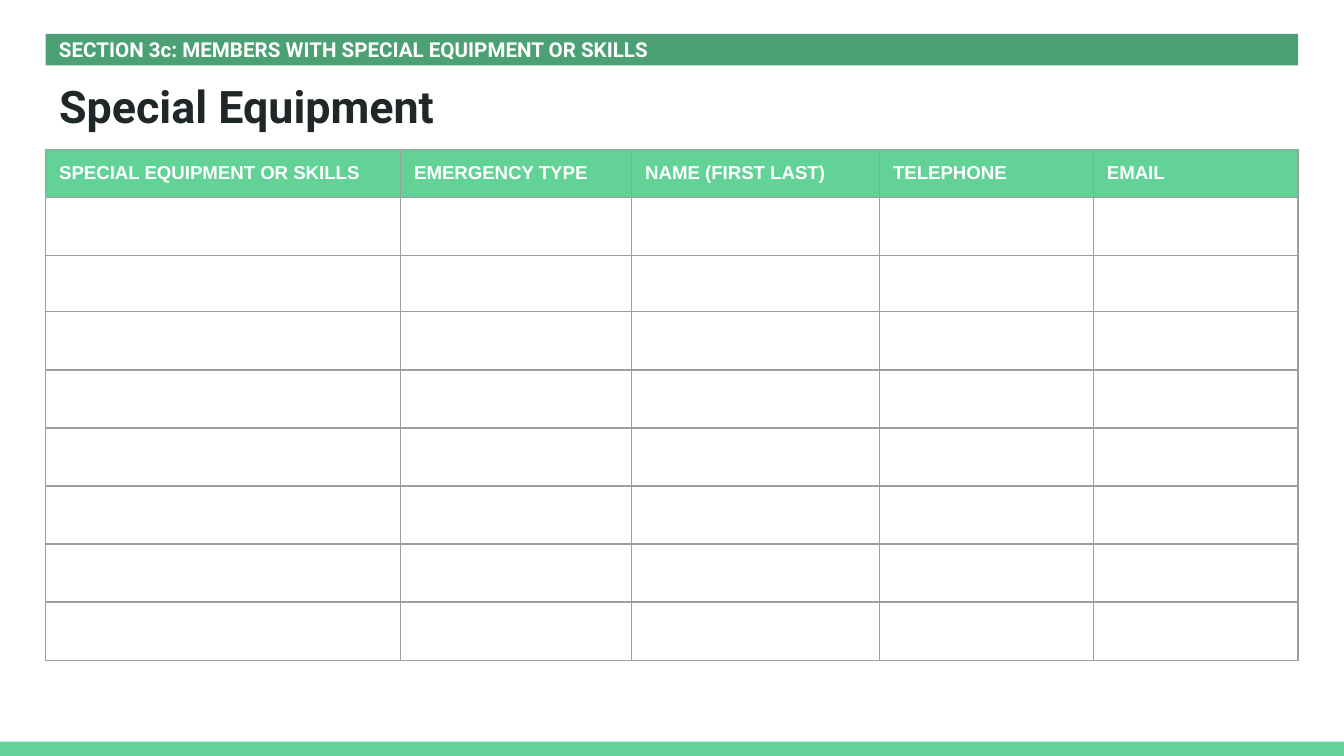
"""Build the special equipment slide with its blank members table."""
from lxml import etree
from pptx import Presentation
from pptx.dml.color import RGBColor
from pptx.enum.shapes import MSO_SHAPE
from pptx.enum.text import MSO_ANCHOR, PP_ALIGN
from pptx.oxml.ns import qn
from pptx.util import Pt

RECTANGLE = MSO_SHAPE.RECTANGLE
TOP, MIDDLE = MSO_ANCHOR.TOP, MSO_ANCHOR.MIDDLE
LEFT = PP_ALIGN.LEFT
GREEN, DARK_GREEN, GREY = "63D297", "4BA173", "9E9E9E"
WHITE, INK = "FFFFFF", "202729"
MARGIN, CONTENT_WIDTH, INSET = 24.5, 671, 7.2


def rgb(value):
    return RGBColor.from_string(value)


def write(frame, text, size, font_name, color):
    frame.text = text
    paragraph = frame.paragraphs[0]
    paragraph.alignment = LEFT
    font = paragraph.runs[0].font
    font.size, font.name, font.bold = Pt(size), font_name, True
    font.color.rgb = rgb(color)


prs = Presentation()
prs.slide_width, prs.slide_height = Pt(720), Pt(405)
slide = prs.slides.add_slide(prs.slide_layouts[5])

bars = []
for left, top, width, height, color in (
    (0, 397.3, 720, 7.7, GREEN),
    (MARGIN, 18.2, CONTENT_WIDTH, 16.8, DARK_GREEN),
):
    bar = slide.shapes.add_shape(RECTANGLE, Pt(left), Pt(top), Pt(width), Pt(height))
    bar.shadow.inherit = False
    bar.fill.solid()
    bar.fill.fore_color.rgb = rgb(color)
    bar.line.fill.background()
    bars.append(bar)

section = bars[1].text_frame
section.margin_left = Pt(INSET)
section.margin_top = section.margin_right = section.margin_bottom = 0
section.vertical_anchor = MIDDLE
write(section, "SECTION 3c: MEMBERS WITH SPECIAL EQUIPMENT OR SKILLS", 11, "Roboto", WHITE)

title = slide.shapes.title
title.left, title.top = Pt(MARGIN), Pt(35)
title.width, title.height = Pt(CONTENT_WIDTH), Pt(45.4)
heading = title.text_frame
heading.margin_left = heading.margin_right = Pt(INSET)
heading.margin_top = heading.margin_bottom = Pt(INSET)
heading.vertical_anchor = TOP
write(heading, "Special Equipment", 24, "Roboto", INK)

columns = (
    ("SPECIAL EQUIPMENT OR SKILLS", 190.2),
    ("EMERGENCY TYPE", 123.8),
    ("NAME (FIRST LAST)", 132.8),
    ("TELEPHONE", 114.6),
    ("EMAIL", 109.6),
)
row_heights = [25.9, 31.1, 30] + [31.1] * 6
members = slide.shapes.add_table(
    len(row_heights), len(columns),
    Pt(MARGIN), Pt(80.1), Pt(CONTENT_WIDTH), Pt(sum(row_heights)),
).table
members.horz_banding = False
members.first_row = False

for row, height in zip(members.rows, row_heights):
    row.height = Pt(height)
for column, (label, width) in zip(members.columns, columns):
    column.width = Pt(width)

for cell in members.iter_cells():
    cell.fill.background()
    properties = cell._tc.get_or_add_tcPr()
    for position, side in enumerate(("a:lnL", "a:lnR", "a:lnT", "a:lnB")):
        border = etree.Element(qn(side), w=str(Pt(0.75)))
        fill = etree.SubElement(border, qn("a:solidFill"))
        etree.SubElement(fill, qn("a:srgbClr"), val=GREY)
        properties.insert(position, border)

for index, (label, width) in enumerate(columns):
    header = members.cell(0, index)
    header.fill.solid()
    header.fill.fore_color.rgb = rgb(GREEN)
    header.margin_left = header.margin_right = Pt(INSET)
    header.margin_top = header.margin_bottom = Pt(INSET)
    write(header.text_frame, label, 10, "Arial", WHITE)

prs.save("out.pptx")
